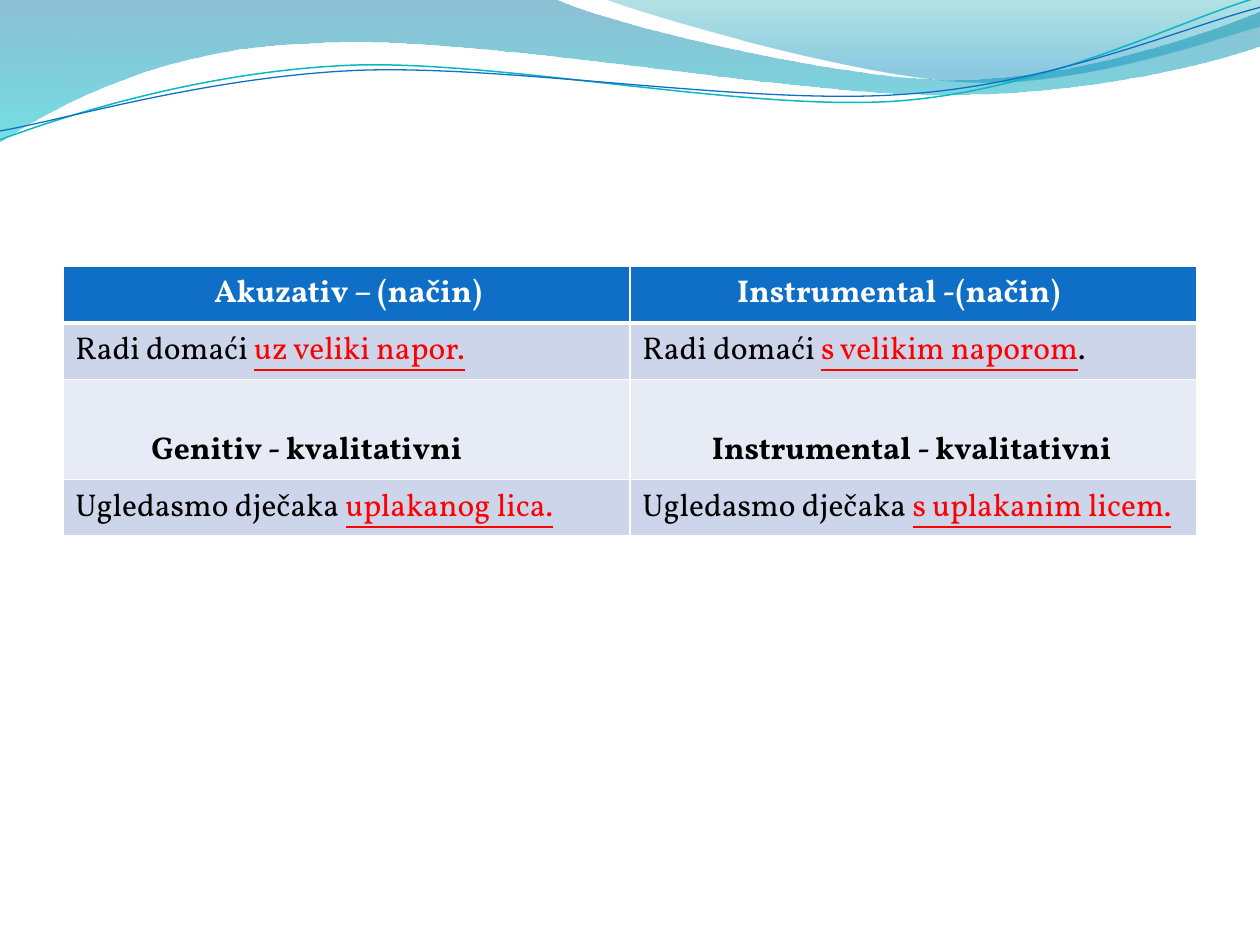
from lxml.etree import SubElement
from pptx import Presentation
from pptx.dml.color import RGBColor
from pptx.enum.text import MSO_ANCHOR as Anchor
from pptx.oxml.ns import qn
from pptx.util import Cm, Pt

BLUE = RGBColor(0x0F, 0x6F, 0xC6)
TEAL = RGBColor(0x0A, 0xB8, 0xBF)
DEEP_BLUE = RGBColor(0x00, 0x74, 0xA1)
CYAN = RGBColor(0x00, 0xC6, 0xCF)
SEA_GREEN = RGBColor(0x00, 0xA1, 0xA9)
SKY_BLUE = RGBColor(0x00, 0x8B, 0xBF)
WHITE = RGBColor(0xFF, 0xFF, 0xFF)
BLACK = RGBColor(0x00, 0x00, 0x00)
RED = RGBColor(0xFF, 0x00, 0x00)
ROW_DARK = RGBColor(0xCC, 0xD5, 0xEA)
ROW_LIGHT = RGBColor(0xE7, 0xEB, 0xF5)

# Outlines in cm: a start point, then lines (x, y) or Bézier curves (six numbers)
WIDE_WAVE = [
    (0, 0), (11.18, -0.03), (12.09, 0.43, 16.87, 1.6, 19.25, 1.6),
    (21.67, 1.6, 24.33, 0.66, 25.4, 0.23), (25.43, 0.91),
    (24.97, 1.12, 22.1, 1.93, 18.95, 1.91), (15.8, 1.91, 9.7, 0.71, 6.53, 0.86),
    (3.28, 0.91, 1.17, 2.11, -0.03, 2.87), (0, 0)]
RIGHT_WAVE = [
    (12.17, -0.03), (12.93, 0.28, 17.32, 1.57, 19.53, 1.65),
    (21.74, 1.75, 24.41, 0.81, 25.4, 0.53), (25.4, 0), (12.17, -0.03)]
# The two curves are given before their rotation
TEAL_CURVE = [
    (-0.05, 2.22), (1.19, 1.82, 4.02, 1.04, 7.05, 1.05),
    (10.05, 1.07, 15.02, 2.37, 18.08, 2.29), (21.13, 2.2, 23.86, 0.91, 25.41, 0.55)]
BLUE_CURVE = [
    (-0.04, 2.04), (1.16, 1.9, 4.17, 1.15, 7.2, 1.16),
    (10.25, 1.18, 15.13, 2.25, 18.19, 2.16), (21.21, 2.11, 23.93, 1.06, 25.45, 0.75)]
CURVE_ROTATION = 357.3

# Rows: height, fill, bold, then per cell the left margin and (text, marked) runs
CASES = [
    (1.04, BLUE, True, [(3.05, [("Akuzativ – (način)", False)]),
                        (2.16, [("Instrumental -(način)", False)])]),
    (1.04, ROW_DARK, False, [
        (0.25, [("Radi domaći ", False), ("uz veliki napor.", True)]),
        (0.25, [("Radi domaći ", False), ("s velikim naporom", True), (".", False)])]),
    (2.02, ROW_LIGHT, True, [(1.78, [("Genitiv - kvalitativni", False)]),
                             (1.65, [("Instrumental - kvalitativni", False)])]),
    (1.04, ROW_DARK, False, [
        (0.25, [("Ugledasmo dječaka ", False), ("uplakanog lica.", True)]),
        (0.25, [("Ugledasmo dječaka ", False), ("s uplakanim licem.", True)])]),
]


class SlideWriter:
    font, size = "Vollkorn", Pt(18)

    def __init__(self, slide):
        self.slide = slide

    def outline(self, outline, close):
        """Draw the segments, turning each six-number one into a cubic curve."""
        start, *segments = outline
        points = [(Cm(s[i]), Cm(s[i + 1])) for s in segments for i in range(0, len(s), 2)]
        builder = self.slide.shapes.build_freeform(Cm(start[0]), Cm(start[1]))
        builder.add_line_segments(points, close=close)
        shape = builder.convert_to_shape()
        shape.shadow.inherit = False

        lines = iter(list(shape._element.spPr.iter(qn("a:lnTo"))))
        for segment in segments:
            line = next(lines)
            if len(segment) == 6:
                curve = line.makeelement(qn("a:cubicBezTo"), {})
                line.addprevious(curve)
                for part in (line, next(lines), next(lines)):
                    curve.append(part[0])
                    part.getparent().remove(part)
        return shape

    def wave(self, outline, stops):
        shape = self.outline(outline, True)
        shape.line.fill.background()
        shape.fill.gradient()
        shape.fill.gradient_angle = 270
        for stop, (position, color, _) in zip(shape.fill.gradient_stops, stops):
            stop.position = position
            stop.color.rgb = color
        colors = shape._element.spPr.iter(qn("a:srgbClr"))
        for node, (_, _, opacity) in zip(list(colors), stops):
            SubElement(node, qn("a:alpha")).set("val", str(opacity * 1000))

    def curve(self, outline, color, width):
        shape = self.outline(outline, False)
        shape.rotation = CURVE_ROTATION
        shape.fill.background()
        shape.line.color.rgb = color
        shape.line.width = Pt(width)

    def borders(self, cell, top, bottom):
        properties = cell._tc.get_or_add_tcPr()
        for index, (side, width) in enumerate(
                (("lnL", 1), ("lnR", 1), ("lnT", top), ("lnB", bottom))):
            line = properties.makeelement(qn("a:" + side), {"w": str(Pt(width))})
            fill = SubElement(line, qn("a:solidFill"))
            SubElement(fill, qn("a:srgbClr")).set("val", str(WHITE))
            properties.insert(index, line)

    def cell(self, cell, runs, margin, fill, bold):
        cell.fill.solid()
        cell.fill.fore_color.rgb = fill
        cell.margin_left = Cm(margin)
        paragraph = cell.text_frame.paragraphs[0]
        for text, marked in runs:
            run = paragraph.add_run()
            run.text = text
            font = run.font
            font.name, font.size, font.bold = self.font, self.size, bold
            font.underline = marked
            font.color.rgb = RED if marked else WHITE if fill == BLUE else BLACK

    def table(self, rows, left, top, width):
        height = sum(row[0] for row in rows)
        table = self.slide.shapes.add_table(
            len(rows), 2, Cm(left), Cm(top), Cm(width), Cm(height)).table
        for r, (row_height, fill, bold, cells) in enumerate(rows):
            table.rows[r].height = Cm(row_height)
            for c, (margin, runs) in enumerate(cells):
                cell = table.cell(r, c)
                self.cell(cell, runs, margin, fill, bold)
                self.borders(cell, 3 if r == 1 else 1, 3 if r == 0 else 1)
                if fill == ROW_LIGHT:
                    cell.vertical_anchor = Anchor.BOTTOM


def main():
    deck = Presentation()
    deck.slide_width, deck.slide_height = Cm(25.4), Cm(19.05)
    writer = SlideWriter(deck.slides.add_slide(deck.slide_layouts[6]))

    # Waves along the top
    writer.wave(WIDE_WAVE, [(0, DEEP_BLUE, 45), (1, CYAN, 55)])
    writer.wave(RIGHT_WAVE, [(0, SEA_GREEN, 30), (0.8, SKY_BLUE, 45)])
    writer.curve(TEAL_CURVE, TEAL, 0.85)
    writer.curve(BLUE_CURVE, BLUE, 0.75)

    # Comparison of cases
    writer.table(CASES, 1.27, 5.37, 22.86)

    deck.save("out.pptx")


if __name__ == "__main__":
    main()
